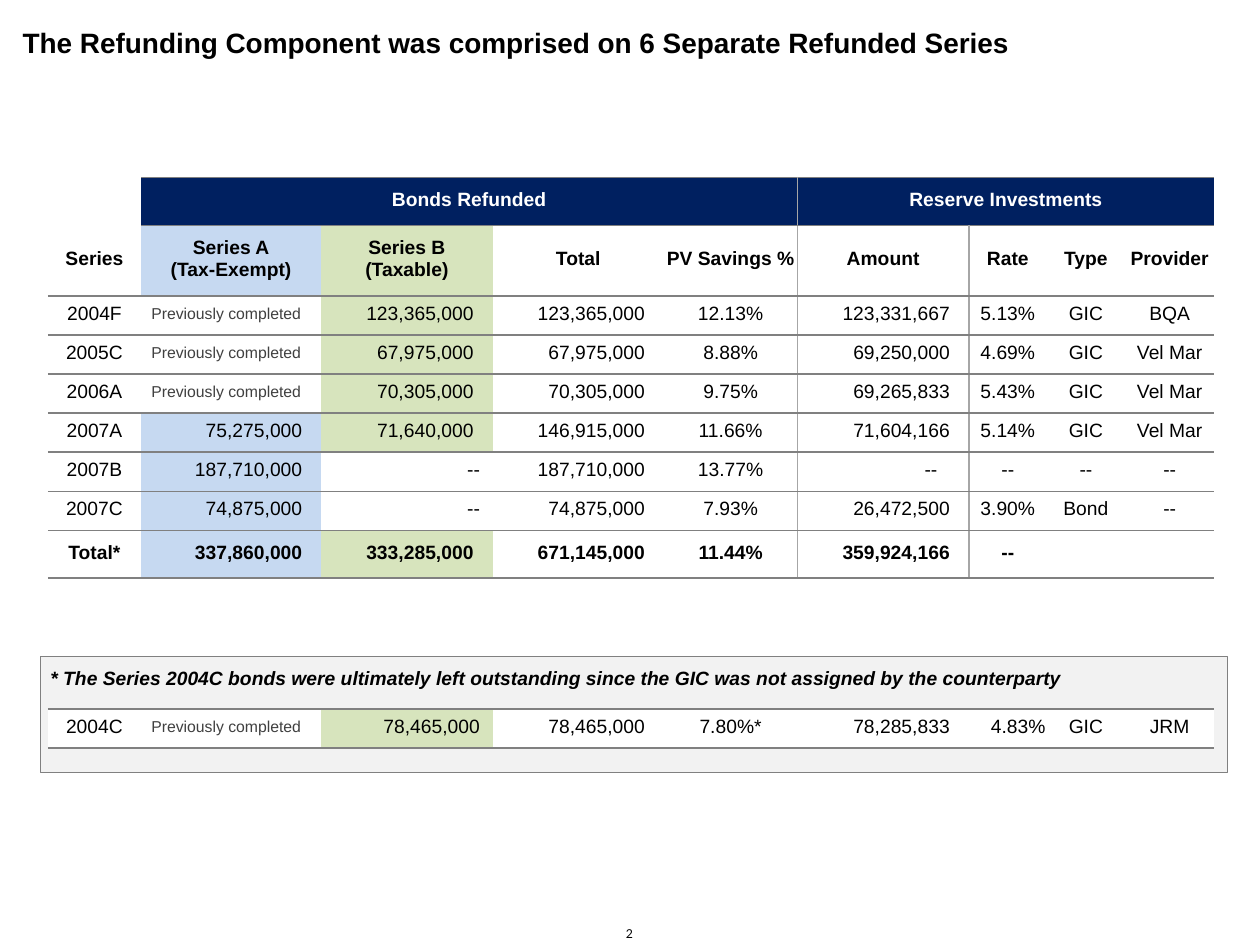
from dataclasses import dataclass

import pptx
import pptx.dml.color
import pptx.enum.shapes
import pptx.enum.text
import pptx.oxml
import pptx.oxml.ns
import pptx.util

Inches, Pt = pptx.util.Inches, pptx.util.Pt
RGB = pptx.dml.color.RGBColor
ALIGN = pptx.enum.text.PP_ALIGN
ANCHOR = pptx.enum.text.MSO_ANCHOR

BLACK = RGB(0, 0, 0)
WHITE = RGB(255, 255, 255)
NAVY = RGB(0x00, 0x20, 0x60)
BLUE = RGB(0xC6, 0xD9, 0xF1)
GREEN = RGB(0xD7, 0xE4, 0xBD)
PALE_GREY = RGB(0xF2, 0xF2, 0xF2)
DARK_GREY = RGB(0x40, 0x40, 0x40)
RULE = RGB(0x80, 0x80, 0x80)
DIVIDER = RGB(0xA6, 0xA6, 0xA6)

DONE, NONE = "Previously completed", "--"
COL_WIDTHS = [0.74, 1.43, 1.36, 1.36, 1.06, 1.36, 0.62, 0.62, 0.71]
AMOUNT_COLS = (1, 2, 3, 5)
COL_FILLS = {1: BLUE, 2: GREEN}
DIVIDER_COL = 5  # first column of Reserve Investments


@dataclass
class Row:
    cells: list[str]
    height: float = 0.31
    bold: bool = False
    header: bool = False
    ruled: bool = True
    divided: bool = True


GROUPS = Row(["", "Bonds Refunded", "", "", "", "Reserve Investments", "", "", ""],
             0.38, bold=True, header=True)
HEADINGS = Row(["Series", "Series A\n(Tax-Exempt)", "Series B\n(Taxable)", "Total",
                "PV Savings %", "Amount", "Rate", "Type", "Provider"],
               0.56, bold=True, header=True)
SERIES = [Row(cells) for cells in (
    ["2004F", DONE, "123,365,000", "123,365,000", "12.13%", "123,331,667", "5.13%", "GIC", "BQA"],
    ["2005C", DONE, "67,975,000", "67,975,000", "8.88%", "69,250,000", "4.69%", "GIC", "Vel Mar"],
    ["2006A", DONE, "70,305,000", "70,305,000", "9.75%", "69,265,833", "5.43%", "GIC", "Vel Mar"],
    ["2007A", "75,275,000", "71,640,000", "146,915,000", "11.66%", "71,604,166", "5.14%", "GIC",
     "Vel Mar"],
    ["2007B", "187,710,000", NONE, "187,710,000", "13.77%", NONE, NONE, NONE, NONE],
    ["2007C", "74,875,000", NONE, "74,875,000", "7.93%", "26,472,500", "3.90%", "Bond", NONE],
)]
TOTAL = Row(["Total*", "337,860,000", "333,285,000", "671,145,000", "11.44%", "359,924,166",
             NONE, "", ""], 0.38, bold=True)
SPACERS = [Row([""] * 9, 0.26, ruled=last, divided=False) for last in (False, False, False, True)]
LEFT_OUT = Row(["2004C", DONE, "78,465,000", "78,465,000", "7.80%*", "78,285,833", "4.83%",
                "GIC", "JRM"], divided=False)
ROWS = [GROUPS, HEADINGS, *SERIES, TOTAL, *SPACERS, LEFT_OUT]


def add_run(p, text: str, size: float, color: RGB, bold: bool = False,
            italic: bool = False, font: str = "Arial") -> None:
    r = p.add_run()
    r.text = text
    r.font.name, r.font.size = font, Pt(size)
    r.font.bold, r.font.italic = bold, italic
    r.font.color.rgb = color


def set_insets(tf, left: float, top: float, right: float, bottom: float) -> None:
    tf.margin_left, tf.margin_top = Inches(left), Inches(top)
    tf.margin_right, tf.margin_bottom = Inches(right), Inches(bottom)


def add_borders(cell, borders: dict[str, RGB]) -> None:
    """Add 1 pt borders; must run before the cell is filled."""
    tc_pr = cell._tc.get_or_add_tcPr()
    for side in "LRTB":
        if side in borders:
            tc_pr.append(pptx.oxml.parse_xml(
                f'<a:ln{side} {pptx.oxml.ns.nsdecls("a")} w="12700"><a:solidFill>'
                f'<a:srgbClr val="{borders[side]}"/></a:solidFill></a:ln{side}>'))


def cell_borders(row: Row, col: int) -> dict[str, RGB]:
    borders = {}
    if row is GROUPS and col == 0:
        return borders
    if row.divided and col == DIVIDER_COL:
        borders["L"] = DIVIDER
    if row.divided and col == DIVIDER_COL - 1:
        borders["R"] = DIVIDER
    if row is GROUPS:
        borders["T"] = RULE
    if row.ruled:
        borders["B"] = RULE
    return borders


def cell_fill(row: Row, col: int, text: str):
    if row is GROUPS:
        return NAVY if col else None
    if col in COL_FILLS and text not in ("", DONE, NONE):
        return COL_FILLS[col]
    return WHITE if row is LEFT_OUT else None


def cell_layout(row: Row, col: int, text: str):
    """Return alignment and right inset."""
    if text == DONE:
        return ALIGN.CENTER, 0.09
    if col in AMOUNT_COLS and not row.header:
        if text == NONE:
            return ALIGN.RIGHT, 0.25 if col == DIVIDER_COL else 0.1
        return ALIGN.RIGHT, 0.1 if row is LEFT_OUT and col == 2 else 0.15
    if row is LEFT_OUT and col == 6:
        return ALIGN.RIGHT, 0.01
    return ALIGN.CENTER, 0.01


def draw_cell(cell, row: Row, col: int) -> None:
    text = row.cells[col]
    add_borders(cell, cell_borders(row, col))
    fill = cell_fill(row, col, text)
    if fill is None:
        cell.fill.background()
    else:
        cell.fill.solid()
        cell.fill.fore_color.rgb = fill
    align, right = cell_layout(row, col, text)
    set_insets(cell, 0.01, 0.01, right, 0.04)
    cell.vertical_anchor = ANCHOR.MIDDLE
    p = cell.text_frame.paragraphs[0]
    p.alignment = align
    if not text:  # keep empty rows from growing
        p._p.append(pptx.oxml.parse_xml(
            f'<a:endParaRPr {pptx.oxml.ns.nsdecls("a")} sz="900"/>'))
        return
    color = WHITE if row is GROUPS else DARK_GREY if text == DONE else BLACK
    for i, line in enumerate(text.split("\n")):
        if i:
            p.add_line_break()
        add_run(p, line, 9 if text == DONE else 11, color, row.bold)


def draw_table(s) -> None:
    frame = s.shapes.add_table(len(ROWS), len(COL_WIDTHS), Inches(0.38), Inches(1.41),
                               Inches(sum(COL_WIDTHS)), Inches(sum(r.height for r in ROWS)))
    table = frame.table
    table.first_row = table.horz_banding = False
    style = table._tbl.tblPr.find(pptx.oxml.ns.qn("a:tableStyleId"))
    style.text = "{2D5ABB26-0587-4C30-8999-92F81FD0307C}"  # no style, no grid
    for col, width in enumerate(COL_WIDTHS):
        table.columns[col].width = Inches(width)
    for i, row in enumerate(ROWS):
        table.rows[i].height = Inches(row.height)
        for col in range(len(COL_WIDTHS)):
            draw_cell(table.cell(i, col), row, col)
    for first in (1, DIVIDER_COL):
        table.cell(0, first).merge(table.cell(0, first + 3))


def draw_note(s) -> None:
    sp = s.shapes.add_shape(pptx.enum.shapes.MSO_SHAPE.RECTANGLE,
                            Inches(0.32), Inches(5.21), Inches(9.42), Inches(0.92))
    sp.shadow.inherit = False
    sp.fill.solid()
    sp.fill.fore_color.rgb = PALE_GREY
    sp.line.color.rgb, sp.line.width = RULE, Pt(0.75)
    tf = sp.text_frame
    tf.word_wrap, tf.vertical_anchor = True, ANCHOR.TOP
    set_insets(tf, 0.08, 0.08, 0.08, 0.08)
    p = tf.paragraphs[0]
    p.alignment = ALIGN.LEFT
    p.space_before = p.space_after = Pt(6)
    add_run(p, "* The Series 2004C bonds were ultimately left outstanding since the GIC "
               "was not assigned by the counterparty", 11, BLACK, True, True)


def draw_title(s) -> None:
    sp = s.shapes.title
    sp.left, sp.top, sp.width, sp.height = Inches(0.1), Inches(0.2), Inches(10.08), Inches(0.27)
    tf = sp.text_frame
    tf.auto_size = pptx.enum.text.MSO_AUTO_SIZE.SHAPE_TO_FIT_TEXT
    set_insets(tf, 0.08, 0, 0.08, 0)
    p = tf.paragraphs[0]
    p.alignment = ALIGN.LEFT
    add_run(p, "The Refunding Component was comprised on 6 Separate Refunded Series",
            16, BLACK, True)


def draw_page_number(s) -> None:
    tf = s.shapes.add_textbox(Inches(4.93), Inches(7.35), Inches(0.13), Inches(0.12)).text_frame
    tf.word_wrap, tf.vertical_anchor = False, ANCHOR.MIDDLE
    set_insets(tf, 0, 0, 0, 0)
    tf.paragraphs[0].alignment = ALIGN.CENTER
    add_run(tf.paragraphs[0], "2", 7, BLACK, font="Lato")


def main() -> None:
    prs = pptx.Presentation()
    prs.slide_width, prs.slide_height = Inches(10), Inches(7.5)
    s = prs.slides.add_slide(prs.slide_layouts[5])  # Title Only
    draw_note(s)
    draw_table(s)
    draw_title(s)
    draw_page_number(s)
    prs.save("out.pptx")


if __name__ == "__main__":
    main()
